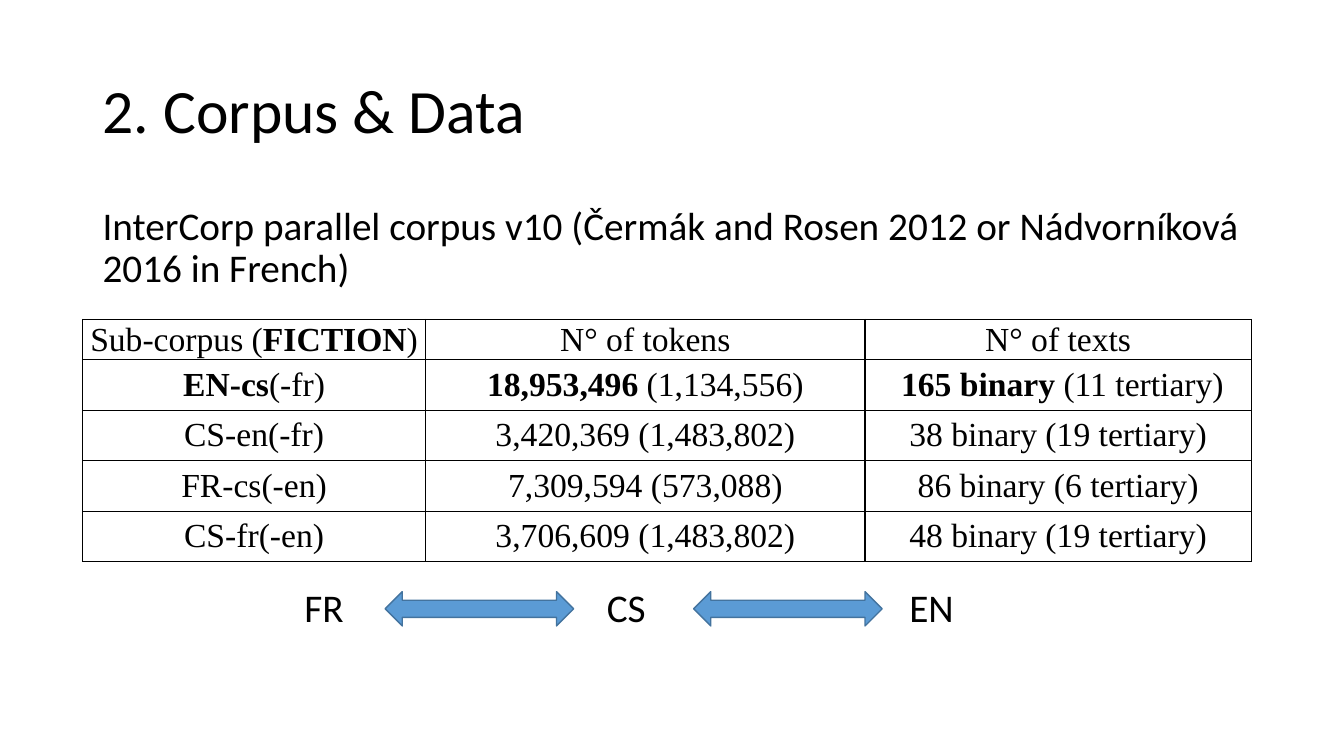
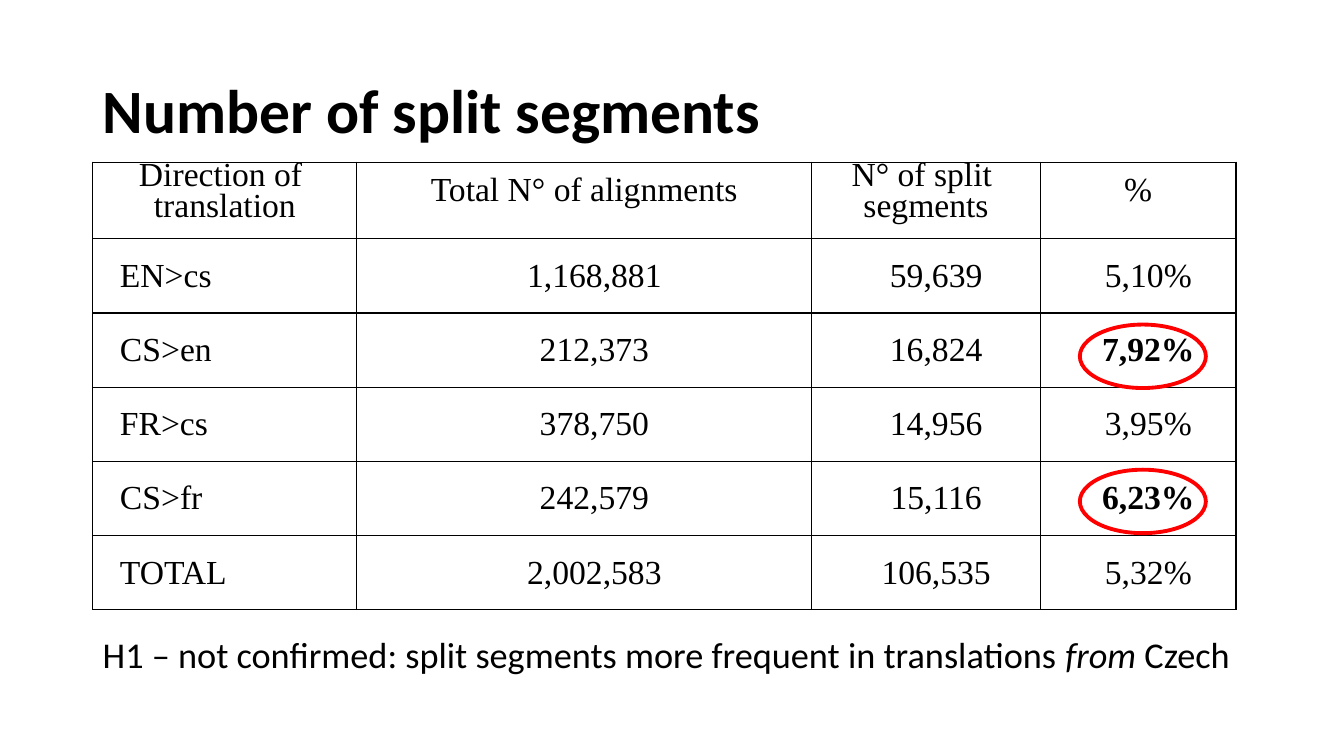
from lxml.etree import SubElement
from pptx import Presentation
from pptx.dml.color import RGBColor
from pptx.enum.shapes import MSO_SHAPE as Preset
from pptx.enum.text import MSO_ANCHOR as Anchor, PP_ALIGN as Align
from pptx.oxml.ns import qn
from pptx.util import Inches, Pt

COLORS = {
    "text": "000000",
    "border": "000000",
    "arrow": "5B9BD5",
    "arrow_line": "43739E",
    "highlight": "FF0000",
}
SANS, SERIF = "Calibri", "Times New Roman"
BOLD, ITALIC = {"bold": True}, {"italic": True}

# Text formats
TITLE = {"name": SANS, "size": Pt(44)}
BODY = {"name": SANS, "size": Pt(28)}
NOTE = {"name": SANS, "size": Pt(25.9)}
CELL = {"name": SERIF, "size": Pt(24)}
TIGHT_BODY = {"line_spacing": 0.9}
CENTERED = {"alignment": Align.CENTER}
HEADER = {"alignment": Align.CENTER, "line_spacing": Pt(22)}
LEFT = {"alignment": Align.LEFT}

# Cell margins
NO_MARGINS = {"margin_left": 0, "margin_right": 0, "margin_top": 0, "margin_bottom": 0}
HEADER_MARGINS = NO_MARGINS | {
    "margin_left": Inches(0.07), "margin_right": Inches(0.07), "margin_bottom": Inches(0.14),
}
INDENTED_MARGINS = NO_MARGINS | {"margin_left": Inches(0.27), "margin_right": Inches(0.07)}

CONTENT_LEFT, CONTENT_WIDTH = 0.92, 11.5


def color(name):
    return RGBColor.from_string(COLORS[name])


def apply_format(target, values):
    for attribute, value in values.items():
        setattr(target, attribute, value)


def write_text(text_frame, paragraphs, font, paragraph_format):
    """Each paragraph is a string or a list of (text, extra font format)."""
    for index, content in enumerate(paragraphs):
        paragraph = text_frame.add_paragraph() if index else text_frame.paragraphs[0]
        apply_format(paragraph, paragraph_format)
        pieces = [(content, {})] if isinstance(content, str) else content
        for text, extra in pieces:
            run = paragraph.add_run()
            run.text = text
            apply_format(run.font, font | extra)
            run.font.color.rgb = color("text")


def add_text(slide, content, left, top, width, height, font, anchor=Anchor.MIDDLE):
    box = slide.shapes.add_textbox(Inches(left), Inches(top), Inches(width), Inches(height))
    apply_format(box.text_frame, {"word_wrap": True, "vertical_anchor": anchor})
    write_text(box.text_frame, [content], font, TIGHT_BODY)


def add_title(slide, title, extra=None):
    add_text(slide, title, CONTENT_LEFT, 0.4, CONTENT_WIDTH, 1.45, TITLE | (extra or {}))


def add_outlined_shape(slide, preset, left, top, width, height, line, line_width, fill=None):
    shape = slide.shapes.add_shape(
        preset, Inches(left), Inches(top), Inches(width), Inches(height))
    shape.shadow.inherit = False
    if fill:
        shape.fill.solid()
        shape.fill.fore_color.rgb = color(fill)
    else:
        shape.fill.background()
    shape.line.color.rgb = color(line)
    shape.line.width = Pt(line_width)


def add_borders(cell):
    properties = cell._tc.get_or_add_tcPr()
    for side in ("a:lnL", "a:lnR", "a:lnT", "a:lnB"):
        line = SubElement(properties, qn(side), w=str(Pt(1)))
        fill = SubElement(line, qn("a:solidFill"))
        SubElement(fill, qn("a:srgbClr"), val=COLORS["border"])


def add_grid(slide, rows, left, top, column_widths, row_heights, cell_style):
    """cell_style(row, column) gives the cell margins and the paragraph format."""
    table = slide.shapes.add_table(
        len(rows), len(column_widths), Inches(left), Inches(top),
        Inches(sum(column_widths)), Inches(sum(row_heights))).table
    apply_format(table, {"first_row": False, "horz_banding": False})
    for column, width in zip(table.columns, column_widths):
        column.width = Inches(width)
    for row_index, (row, height) in enumerate(zip(rows, row_heights)):
        table.rows[row_index].height = Inches(height)
        for column_index, paragraphs in enumerate(row):
            cell = table.cell(row_index, column_index)
            margins, paragraph_format = cell_style(row_index, column_index)
            add_borders(cell)
            cell.fill.background()
            apply_format(cell, margins | {"vertical_anchor": Anchor.MIDDLE})
            write_text(cell.text_frame, paragraphs, CELL, paragraph_format)


def build_corpus_slide(slide):
    add_title(slide, "2. Corpus & Data")
    add_text(
        slide,
        "InterCorp parallel corpus v10 (Čermák and Rosen 2012 or Nádvorníková 2016 in French)",
        CONTENT_LEFT, 2, CONTENT_WIDTH, 1, BODY, Anchor.TOP)

    # Sub-corpus sizes
    rows = [
        [[[("Sub-corpus (", {}), ("FICTION", BOLD), (")", {})]],
         ["N° of tokens"], ["N° of texts"]],
        [[[("EN-cs", BOLD), ("(-fr)", {})]],
         [[("18,953,496 ", BOLD), ("(1,134,556)", {})]],
         [[(" 165 binary ", BOLD), ("(11 tertiary)", {})]]],
        [["CS-en(-fr)"], ["3,420,369 (1,483,802)"], ["38 binary (19 tertiary)"]],
        [["FR-cs(-en)"], ["7,309,594 (573,088)"], ["86 binary (6 tertiary)"]],
        [["CS-fr(-en)"], ["3,706,609 (1,483,802)"], ["48 binary (19 tertiary)"]],
    ]
    add_grid(slide, rows, 0.82, 3.17, [3.4, 4.36, 3.83], [0.38] + [0.5] * 4,
             lambda row, column: (NO_MARGINS, CENTERED))

    # Language pairs
    for index, language in enumerate(("FR", "CS", "EN")):
        add_text(slide, language, CONTENT_LEFT + 2 + 3 * index, 5.8, 0.8, 0.5, BODY)
    for left in (3.82, 6.88):
        add_outlined_shape(slide, Preset.LEFT_RIGHT_ARROW, left, 5.87, 1.87, 0.34,
                           "arrow_line", 1, "arrow")


def split_cell_style(row, column):
    if row == 0:
        return HEADER_MARGINS, HEADER
    return INDENTED_MARGINS, CENTERED if column else LEFT


def build_segments_slide(slide):
    add_title(slide, "Number of split segments", BOLD)

    # Split segments by direction
    rows = [
        [["Direction of ", "translation"], ["Total N° of alignments"],
         ["N° of split ", "segments"], ["%"]],
        [["EN>cs"], ["1,168,881"], ["59,639"], ["5,10%"]],
        [["CS>en"], ["212,373"], ["16,824"], [[("7,92%", BOLD)]]],
        [["FR>cs"], ["378,750"], ["14,956"], ["3,95%"]],
        [["CS>fr"], ["242,579"], ["15,116"], [[("6,23%", BOLD)]]],
        [["TOTAL"], ["2,002,583"], ["106,535"], ["5,32%"]],
    ]
    header_height = 0.76
    row_height = (4.44 - header_height) / 5
    add_grid(slide, rows, CONTENT_LEFT, 1.61, [2.62, 4.51, 2.27, 1.94],
             [header_height] + [row_height] * 5, split_cell_style)

    # Highlighted percentages
    for top in (3.22, 4.66):
        add_outlined_shape(slide, Preset.OVAL, 10.71, top, 1.25, 0.63, "highlight", 2.75)

    # Conclusion
    conclusion = [
        ("H1 – not confirmed: split segments more frequent in translations ", {}),
        ("from ", ITALIC),
        ("Czech", {}),
    ]
    add_text(slide, conclusion, CONTENT_LEFT, 6.27, CONTENT_WIDTH, 0.5, NOTE)


def main():
    presentation = Presentation()
    apply_format(presentation, {"slide_width": Inches(13.33), "slide_height": Inches(7.5)})
    blank_layout = presentation.slide_layouts[6]
    for build in (build_corpus_slide, build_segments_slide):
        build(presentation.slides.add_slide(blank_layout))
    presentation.save("out.pptx")


if __name__ == "__main__":
    main()
